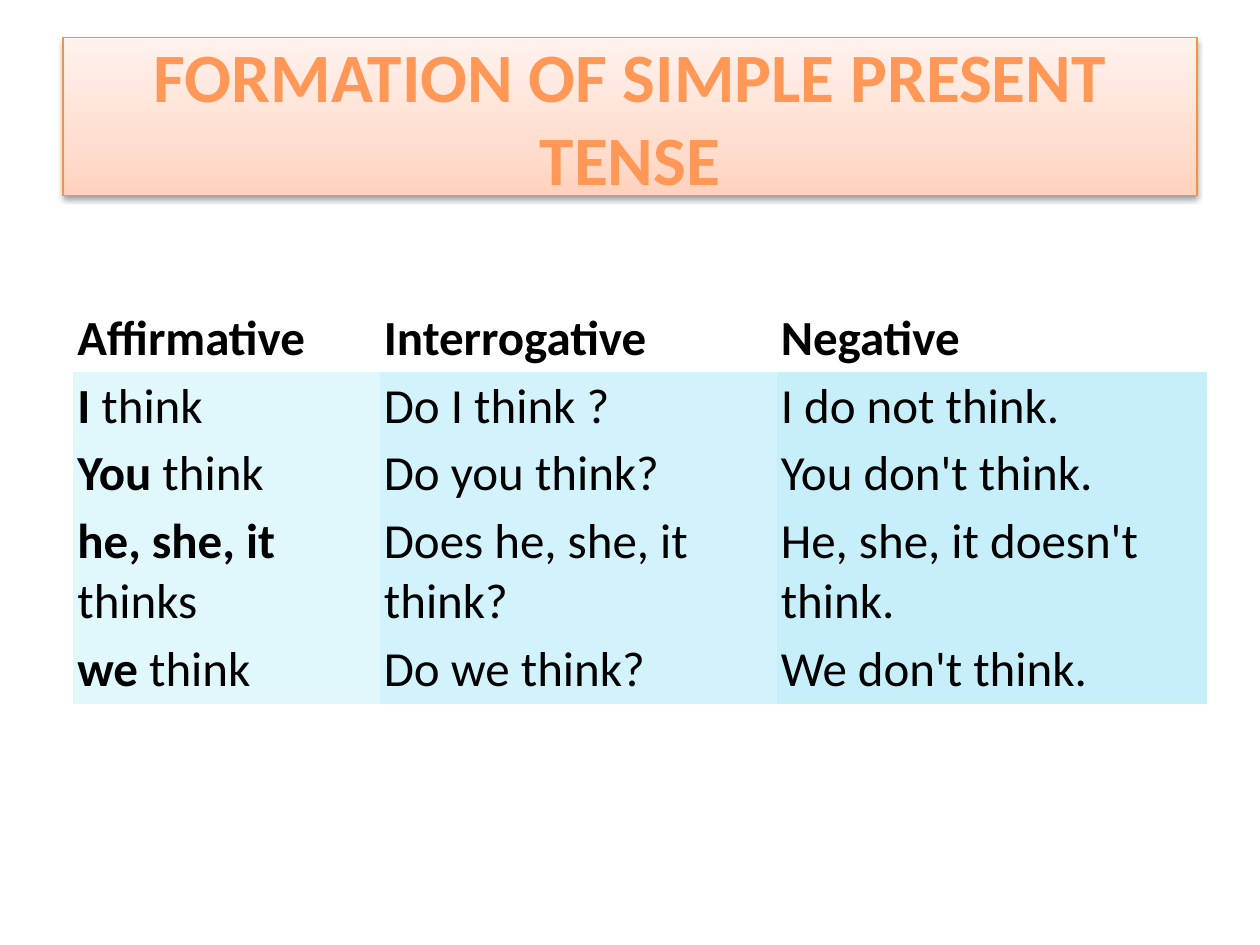
from lxml.etree import fromstring
from pptx import Presentation
from pptx.dml.color import RGBColor
from pptx.enum.shapes import MSO_SHAPE
from pptx.enum.text import MSO_ANCHOR, PP_ALIGN
from pptx.oxml.ns import qn
from pptx.util import Cm, Pt

BLACK = RGBColor(0, 0, 0)
ORANGE = RGBColor(0xFF, 0x98, 0x56)
EDGE = RGBColor(0xF6, 0x92, 0x40)
TINTS = [RGBColor(0xE0, 0xF7, 0xFC), RGBColor(0xD2, 0xF3, 0xFB), RGBColor(0xC7, 0xEF, 0xFA)]
PEACH = [(0, "FFD2BD"), (35, "FFDED0"), (100, "FFF2ED")]
PLAIN = "{2D5ABB26-0587-4C30-8999-92F81FD0307C}"
SPACE = 'xmlns:a="http://schemas.openxmlformats.org/drawingml/2006/main"'
HEADS = ["Affirmative", "Interrogative", "Negative"]
ROWS = [
    (("I", " think"), "Do I think ?", "I do not think."),
    (("You", " think"), "Do you think?", "You don't think."),
    (("he, she, it", " thinks"), "Does he, she, it think?", "He, she, it doesn't think."),
    (("we", " think"), "Do we think?", "We don't think."),
]


def write(para, text, size=28, color=BLACK, bold=False, font="Calibri"):
    """Add one formatted run of text to a paragraph."""
    run = para.add_run()
    run.text = text
    run.font.name = font
    run.font.size = Pt(size)
    run.font.bold = bold
    run.font.color.rgb = color


class Page:
    """Hold the deck, the current slide and its style."""

    def __init__(self, width, height):
        """Start a deck with one blank slide."""
        self.deck = Presentation()
        self.deck.slide_width, self.deck.slide_height = Cm(width), Cm(height)
        self.slide = self.deck.slides.add_slide(self.deck.slide_layouts[6])
        self.inset = Cm(0.08)

    def banner(self, text, left, top, width, height):
        """Draw the shaded title box."""
        box = self.slide.shapes.add_shape(
            MSO_SHAPE.RECTANGLE, Cm(left), Cm(top), Cm(width), Cm(height))
        box.line.color.rgb = EDGE
        box.line.width = Pt(0.75)
        self.shade(box, PEACH)
        frame = box.text_frame
        frame.word_wrap = True
        frame.vertical_anchor = MSO_ANCHOR.MIDDLE
        para = frame.paragraphs[0]
        para.alignment = PP_ALIGN.CENTER
        write(para, text, size=39.6, color=ORANGE, bold=True)

    def shade(self, box, stops):
        """Give a box an upward gradient and a soft drop shadow."""
        box.fill.gradient()
        box.fill.gradient_angle = 90
        parts = box.element.spPr.find(qn("a:gradFill")).find(qn("a:gsLst"))
        parts.clear()
        for place, tone in stops:
            parts.append(fromstring(
                f'<a:gs {SPACE} pos="{place * 1000}"><a:srgbClr val="{tone}"/></a:gs>'))
        box.shadow.inherit = False
        box.element.spPr.find(qn("a:effectLst")).append(fromstring(
            f'<a:outerShdw {SPACE} blurRad="{Pt(3.1)}" dist="{Pt(1.6)}" dir="5400000" '
            'rotWithShape="0"><a:srgbClr val="000000"><a:alpha val="38000"/>'
            '</a:srgbClr></a:outerShdw>'))

    def table(self, heads, rows, left, top, widths, heights):
        """Draw a table with a plain header and tinted columns."""
        frame = self.slide.shapes.add_table(
            len(heights), len(widths), Cm(left), Cm(top), Cm(sum(widths)), Cm(sum(heights)))
        grid = frame.table
        next(frame.element.iter(qn("a:tableStyleId"))).text = PLAIN
        for col, width in zip(grid.columns, widths):
            col.width = Cm(width)
        for row, height in zip(grid.rows, heights):
            row.height = Cm(height)
        for col, (head, tint) in enumerate(zip(heads, TINTS)):
            self.cell(grid.cell(0, col), (head, ""))
            for row, texts in enumerate(rows, 1):
                item = texts[col]
                pair = item if isinstance(item, tuple) else ("", item)
                self.cell(grid.cell(row, col), pair, tint)

    def cell(self, cell, pair, tint=None):
        """Fill a cell with a bold part and a plain part."""
        cell.margin_left = cell.margin_right = self.inset
        cell.margin_top = cell.margin_bottom = self.inset
        if tint is None:
            cell.fill.background()
        else:
            cell.fill.solid()
            cell.fill.fore_color.rgb = tint
        for text, bold in zip(pair, (True, False)):
            if text:
                write(cell.text_frame.paragraphs[0], text, bold=bold)


def main():
    """Build and save the slide."""
    page = Page(25.4, 19.05)
    page.banner("FORMATION OF SIMPLE PRESENT TENSE", 1.27, 0.76, 22.86, 3.18)
    page.table(HEADS, ROWS, 1.48, 6.14, [6.18, 8, 8.68], [1.36, 1.36, 1.36, 2.57, 1.36])
    page.deck.save("out.pptx")


if __name__ == "__main__":
    main()
